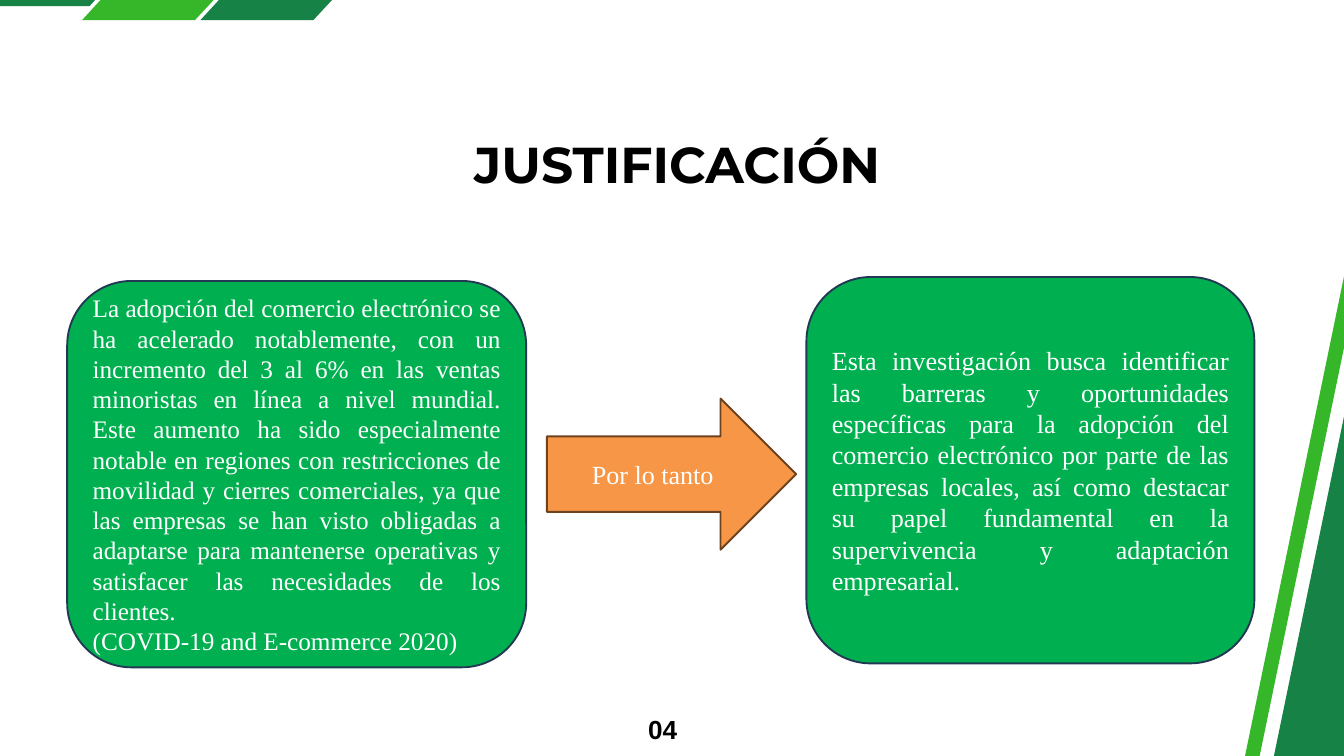
import pptx
import pptx.dml.color
import pptx.enum.shapes
import pptx.enum.text
import pptx.util

Pt = pptx.util.Pt
RGBColor = pptx.dml.color.RGBColor
SHAPE = pptx.enum.shapes.MSO_SHAPE
ALIGN = pptx.enum.text.PP_ALIGN
ANCHOR = pptx.enum.text.MSO_ANCHOR

WHITE = RGBColor(0xFF, 0xFF, 0xFF)
BLACK = RGBColor(0x00, 0x00, 0x00)
DARK_GREEN = RGBColor(0x16, 0x82, 0x46)
LIGHT_GREEN = RGBColor(0x35, 0xB7, 0x29)
CARD_GREEN = RGBColor(0x00, 0xB0, 0x50)
CARD_LINE = RGBColor(0x23, 0x39, 0x53)
ORANGE = RGBColor(0xF7, 0x96, 0x46)
ARROW_LINE = RGBColor(0x6C, 0x42, 0x1F)


def place(box, left, top, width, height):
    box.left, box.top = Pt(left), Pt(top)
    box.width, box.height = Pt(width), Pt(height)


def write(box, text, align, color, anchor, frame_format, font_format):
    """Fill the box with one paragraph; a vertical tab in text is a line break."""
    frame = box.text_frame
    frame.word_wrap = True
    frame.auto_size = pptx.enum.text.MSO_AUTO_SIZE.NONE
    frame.vertical_anchor = anchor
    for name, value in frame_format.items():
        setattr(frame, name, value)
    para = frame.paragraphs[0]
    para.text = text
    para.alignment = align
    for span in para.runs:
        span.font.color.rgb = color
        for name, value in font_format.items():
            setattr(span.font, name, value)
    return para


deck = pptx.Presentation()
deck.slide_width, deck.slide_height = Pt(1440), Pt(810)
page = deck.slides.add_slide(deck.slide_layouts[5])

# Slanted bands bleeding off the top left and the right edge
slant = [(175.5, -74), (297.5, -74), (209, 21.5), (88, 21.5)]
bands = [
    (DARK_GREEN, [(-129, -60), (156, -60), (96, 6.5), (-189.5, 6.5)]),
    (LIGHT_GREEN, slant),
    (DARK_GREEN, [(x + 126.8, y) for x, y in slant]),
    (DARK_GREEN, [(1305.5, 1098), (1544.5, -60), (1872.5, 8.5), (1633.5, 1165.5)]),
    (LIGHT_GREEN, [(1274.5, 1098), (1513.5, -60), (1528.5, -56), (1289.5, 1101)]),
]
for color, corners in bands:
    points = [(Pt(x), Pt(y)) for x, y in corners]
    builder = page.shapes.build_freeform(*points[0])
    builder.add_line_segments(points[1:], close=True)
    band = builder.convert_to_shape()
    band.shadow.inherit = False
    band.fill.solid()
    band.fill.fore_color.rgb = color
    band.line.fill.background()

# Title and page number
no_margins = dict.fromkeys(
    ("margin_left", "margin_top", "margin_right", "margin_bottom"), 0)
title = page.shapes.title
place(title, 454.5, 142.5, 542, 65.5)
write(title, "JUSTIFICACIÓN", ALIGN.CENTER, BLACK, ANCHOR.TOP, no_margins,
      {"name": "Montserrat", "size": Pt(54), "bold": True})

number = page.shapes.add_textbox(Pt(685.5), Pt(759), Pt(40), Pt(36))
para = write(number, "04", ALIGN.RIGHT, BLACK, ANCHOR.TOP, no_margins,
             {"name": "Arial", "size": Pt(28), "bold": True})
para.line_spacing = Pt(39.2)

# Premise, arrow and purpose
premise = (
    "La adopción del comercio electrónico se ha acelerado notablemente, con un "
    "incremento del 3 al 6% en las ventas minoristas en línea a nivel mundial. "
    "Este aumento ha sido especialmente notable en regiones con restricciones de "
    "movilidad y cierres comerciales, ya que las empresas se han visto obligadas a "
    "adaptarse para mantenerse operativas y satisfacer las necesidades de los "
    "clientes.\v(COVID-19 and E-commerce 2020)")
purpose = (
    "Esta investigación busca identificar las barreras y oportunidades específicas "
    "para la adopción del comercio electrónico por parte de las empresas locales, "
    "así como destacar su papel fundamental en la supervivencia y adaptación "
    "empresarial.")
blocks = [
    (SHAPE.ROUNDED_RECTANGLE, (72, 301, 491.8, 414), CARD_GREEN, CARD_LINE,
     premise, ALIGN.JUSTIFY, 27),
    (SHAPE.ROUNDED_RECTANGLE, (864, 296.8, 480, 414), CARD_GREEN, CARD_LINE,
     purpose, ALIGN.JUSTIFY, 28),
    (SHAPE.RIGHT_ARROW, (586, 427, 267, 162), ORANGE, ARROW_LINE,
     "Por lo tanto", ALIGN.CENTER, 28),
]
for kind, area, fill, line, text, align, size in blocks:
    block = page.shapes.add_shape(kind, *map(Pt, area))
    block.shadow.inherit = False
    block.fill.solid()
    block.fill.fore_color.rgb = fill
    block.line.color.rgb = line
    block.line.width = Pt(2)
    write(block, text, align, WHITE, ANCHOR.MIDDLE, {},
          {"name": "Times New Roman", "size": Pt(size)})

deck.save("out.pptx")
